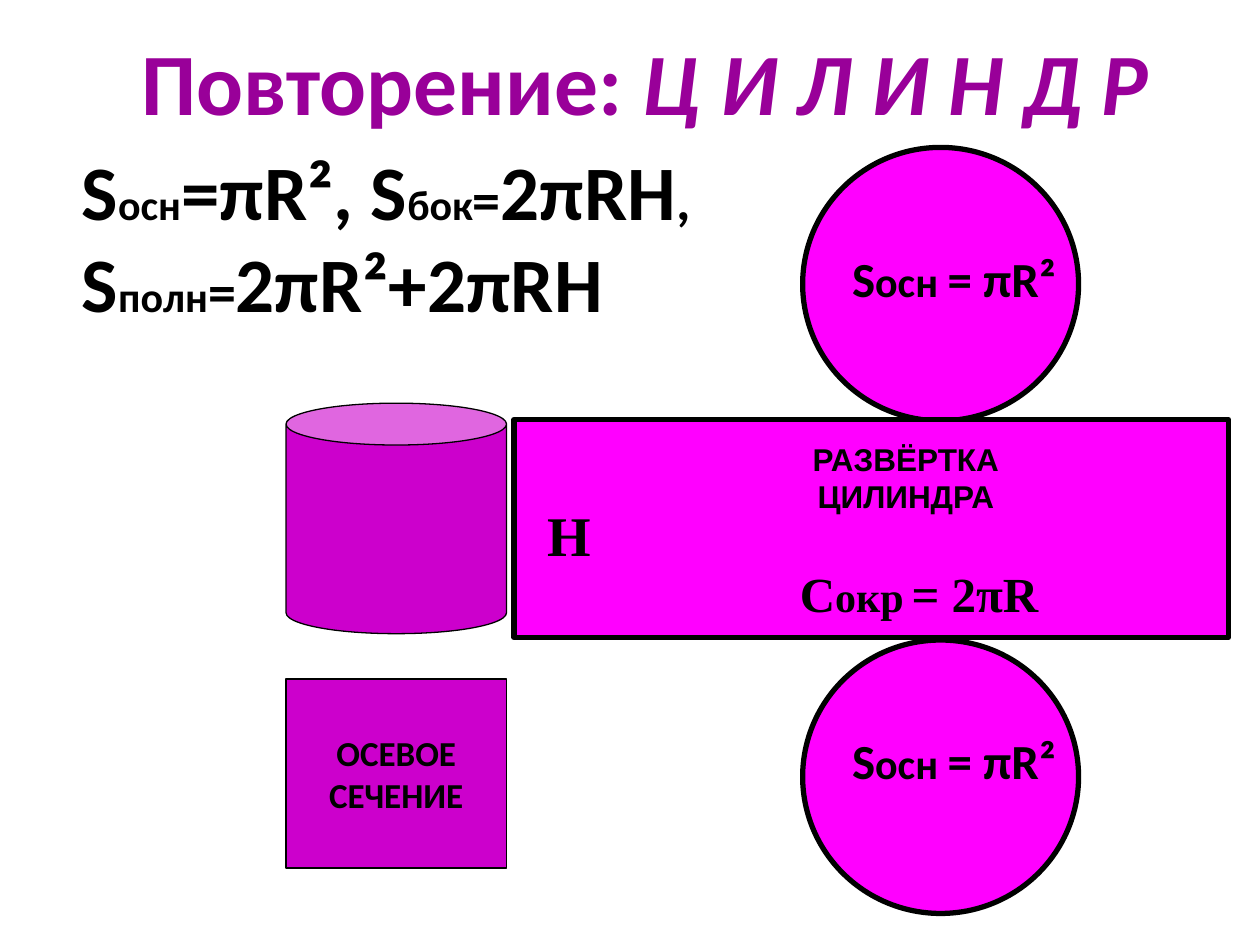
from dataclasses import dataclass

from pptx import Presentation
from pptx.dml.color import RGBColor
from pptx.enum.shapes import MSO_SHAPE as Preset
from pptx.enum.text import MSO_ANCHOR as Anchor, MSO_AUTO_SIZE as AutoSize, PP_ALIGN as Align
from pptx.util import Inches, Pt


@dataclass(frozen=True)
class Theme:
    title: str = "990099"
    net: str = "FF00FF"
    solid: str = "CC00CC"
    ink: str = "000000"
    main_font: str = "Calibri"
    serif_font: str = "Times New Roman"
    caption_font: str = "Arial"
    title_size: int = 50
    formula_size: int = 44
    sign_size: int = 32
    label_size: int = 28
    index_size: int = 24
    section_size: int = 20
    caption_size: int = 18
    thick: float = 3
    thin: float = 0.75


@dataclass(frozen=True)
class Box:
    left: float
    top: float
    width: float
    height: float

    def inside(self, left, top, width, height):
        return Box(self.left + left, self.top + top, width, height)

    def lengths(self):
        return [Inches(value) for value in (self.left, self.top, self.width, self.height)]


THEME = Theme()


def add_run(paragraph, text, size, font=THEME.main_font, color=THEME.ink, italic=False):
    run = paragraph.add_run()
    run.text = text
    run.font.name = font
    run.font.size = Pt(size)
    run.font.bold = True
    run.font.italic = italic
    run.font.color.rgb = RGBColor.from_string(color)


def write(frame, lines, font=THEME.main_font, align=Align.LEFT):
    for index, runs in enumerate(lines):
        paragraph = frame.add_paragraph() if index else frame.paragraphs[0]
        paragraph.alignment = align
        for text, size in runs:
            add_run(paragraph, text, size, font)


def add_text(slide, box, lines, font=THEME.main_font, align=Align.LEFT):
    frame = slide.shapes.add_textbox(*box.lengths()).text_frame
    frame.word_wrap = True
    write(frame, lines, font, align)


def add_figure(shapes, preset, box, fill, weight):
    shape = shapes.add_shape(preset, *box.lengths())
    shape.shadow.inherit = False
    shape.fill.solid()
    shape.fill.fore_color.rgb = RGBColor.from_string(fill)
    shape.line.color.rgb = RGBColor.from_string(THEME.ink)
    shape.line.width = Pt(weight)
    return shape


def add_title(slide, box):
    title = slide.shapes.title
    title.left, title.top, title.width, title.height = box.lengths()
    frame = title.text_frame
    frame.auto_size = AutoSize.NONE
    frame.vertical_anchor = Anchor.TOP
    paragraph = frame.paragraphs[0]
    paragraph.alignment = Align.CENTER
    add_run(paragraph, "Повторение: ", THEME.title_size, color=THEME.title)
    add_run(paragraph, "Ц И Л И Н Д Р", THEME.title_size, color=THEME.title, italic=True)


def add_formulas(slide, box):
    large, sign, index = THEME.formula_size, THEME.sign_size, THEME.index_size
    add_text(slide, box, [[
        ("S", large), ("осн", index), ("=πR², S", large),
        ("бок", index), ("=", sign), ("2πRH", large), (",", sign),
        (" S", large), ("полн", index), ("=", sign), ("2πR²+2πRH", large),
    ]])


def add_net(slide, box):
    circle_width, circle_height, side_height = 2.19, 2.17, 1.73
    circle_left = 2.29
    lower_top = box.height - circle_height
    upper = box.inside(circle_left, 0, circle_width, circle_height)
    side = box.inside(0, 2.16, box.width, side_height)
    lower = box.inside(circle_left, lower_top, circle_width, circle_height)

    group = slide.shapes.add_group_shape()
    for preset, part in ((Preset.OVAL, upper), (Preset.RECTANGLE, side), (Preset.OVAL, lower)):
        add_figure(group.shapes, preset, part, THEME.net, THEME.thick)

    label, index = THEME.label_size, THEME.index_size
    base_area = [("S", label), ("осн ", index), ("= πR²", label)]
    for circle, offset in ((upper, 0.75), (lower, 0.67)):
        add_text(slide, circle.inside(-0.01, offset, 2.42, 0.57), [base_area], align=Align.CENTER)

    add_text(slide, side.inside(0.17, 0.59, 0.5, 0.63), [[("Н", THEME.sign_size)]], THEME.serif_font)
    circumference = [("C", label), ("oкp", index), (" ", THEME.caption_size), ("= 2πR", label)]
    add_text(slide, side.inside(2.17, 1.09, 2.33, 0.57), [circumference], THEME.serif_font)
    caption = [[(word, THEME.caption_size)] for word in ("РАЗВЁРТКА", "ЦИЛИНДРА")]
    add_text(slide, side.inside(0.61, 0.11, 5, 0.71), caption, THEME.caption_font, Align.CENTER)


def add_cylinder(slide, box):
    can = add_figure(slide.shapes, Preset.CAN, box.inside(0, 0, box.width, 1.83), THEME.solid, THEME.thin)
    can.adjustments[0] = 0.19
    section_box = box.inside(0, box.height - 1.5, box.width, 1.5)
    section = add_figure(slide.shapes, Preset.RECTANGLE, section_box, THEME.solid, THEME.thin)
    frame = section.text_frame
    frame.word_wrap = False
    frame.vertical_anchor = Anchor.MIDDLE
    words = [[(word, THEME.section_size)] for word in ("ОСЕВОЕ", "СЕЧЕНИЕ")]
    write(frame, words, align=Align.CENTER)


def main():
    presentation = Presentation()
    presentation.slide_width = Inches(10)
    presentation.slide_height = Inches(7.5)
    slide = presentation.slides.add_slide(presentation.slide_layouts[5])
    add_title(slide, Box(0.33, 0.17, 9.58, 0.93))
    add_net(slide, Box(4.08, 1.17, 5.67, 6.08))
    add_formulas(slide, Box(0.55, 1.09, 6.17, 1.58))
    add_cylinder(slide, Box(2.27, 3.2, 1.75, 3.69))
    presentation.save("out.pptx")


if __name__ == "__main__":
    main()
